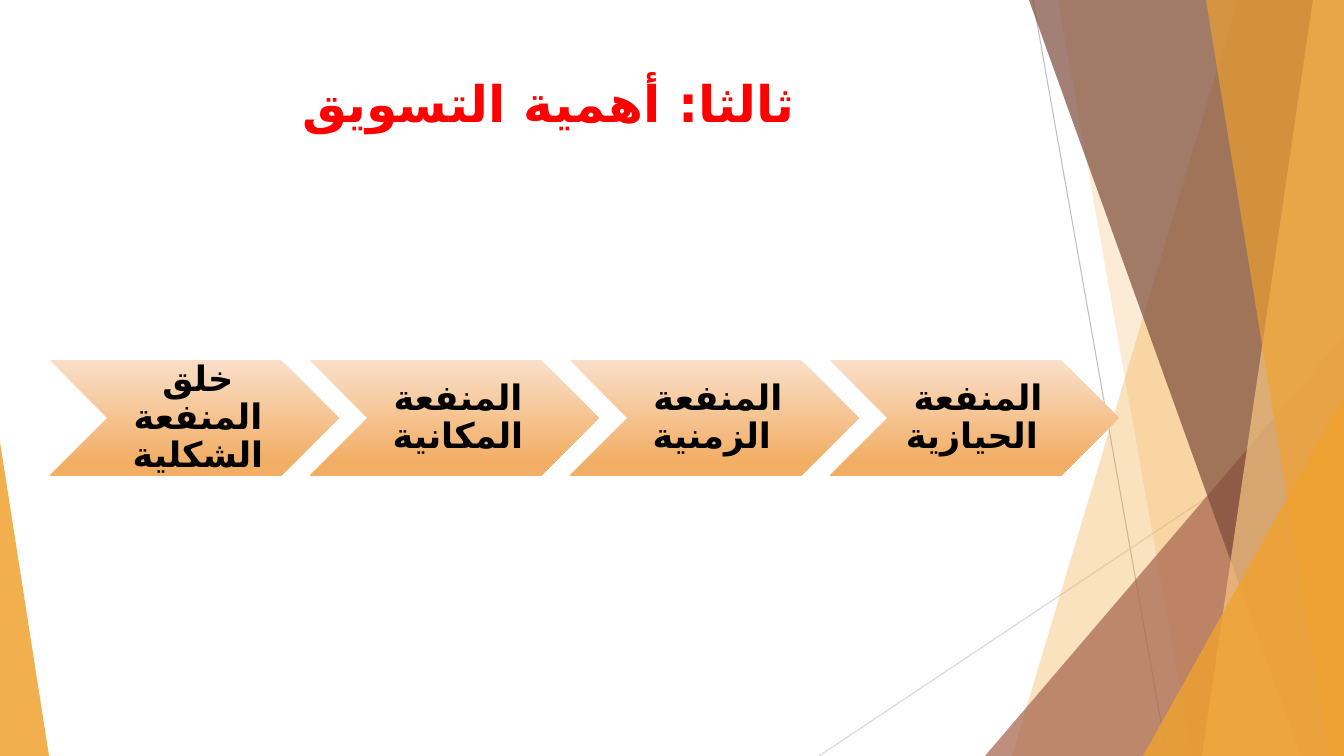
from lxml import etree
from pptx import Presentation, util as u
from pptx.dml.color import RGBColor
from pptx.enum import shapes, text
from pptx.oxml.ns import qn

PX = 914400 / 100.8
WIDTH, HEIGHT = 1344, 756
COLOURS = {
    "amber": "F0A22E", "pale amber": "F6C782", "rust": "A5644E", "brown": "7C4B3B",
    "grey": "BFBFBF", "light grey": "D9D9D9", "title": "FF0000", "text": "000000",
    "chevron top": "F9DFC9", "chevron bottom": "F2AE65",
}


def px(*lengths):
    return [u.Emu(round(length * PX)) for length in lengths]


def format_paragraph(paragraph, size, colour):
    paragraph.alignment = text.PP_ALIGN.CENTER
    for run in paragraph.runs:
        run.font.size = u.Pt(size)
        run.font.bold = True
        run.font.name = "Lato"
        run.font.color.rgb = RGBColor.from_string(COLOURS[colour])
        # Lato has no Arabic letters, so they take a complex-script font
        etree.SubElement(run.font._element, qn("a:cs"), typeface="DejaVu Sans")


presentation = Presentation()
presentation.slide_width, presentation.slide_height = px(WIDTH, HEIGHT)
slide = presentation.slides.add_slide(presentation.slide_layouts[5])

# Thin lines behind the coloured facets
for colour, ends in [("grey", (1033, 0, 1167, HEIGHT)),
                     ("light grey", (WIDTH, 406, 819, HEIGHT))]:
    line = slide.shapes.add_connector(shapes.MSO_CONNECTOR.STRAIGHT, *px(*ends))
    line.line.color.rgb = RGBColor.from_string(COLOURS[colour])
    line.line.width = u.Pt(0.75)
    etree.SubElement(line._element.spPr, qn("a:effectLst"))

# Facets: colour, opacity in percent, kind, and either
# the top-left, top-right, bottom-right and bottom-left x of a band,
# or the left, top, width, height and apex of a triangle
facets = [
    ("amber", 30, "band", (1238, WIDTH, WIDTH, 1012)),
    ("amber", 20, "band", (1058, WIDTH, WIDTH, 1192)),
    ("rust", 72, "triangle", (985, 336, 359, 420, 1)),
    ("brown", 70, "band", (1029, WIDTH, WIDTH, 1301)),
    ("pale amber", 70, "band", (1313, WIDTH, WIDTH, 1202)),
    ("amber", 65, "band", (1206, WIDTH, WIDTH, 1329)),
    ("amber", 80, "triangle", (1143, 396, 201, 360, 1)),
    ("amber", 85, "triangle", (0, 442, 49, 314, 0)),
]
for colour, opacity, kind, geometry in facets:
    if kind == "band":
        corners = list(zip(geometry, (0, 0, HEIGHT, HEIGHT)))
        builder = slide.shapes.build_freeform(*corners[0], scale=PX)
        builder.add_line_segments(corners[1:], close=True)
        facet = builder.convert_to_shape()
    else:
        *box, apex = geometry
        facet = slide.shapes.add_shape(shapes.MSO_SHAPE.ISOSCELES_TRIANGLE, *px(*box))
        facet.adjustments[0] = apex
    facet.shadow.inherit = False
    facet.line.fill.background()
    facet.fill.solid()
    facet.fill.fore_color.rgb = RGBColor.from_string(COLOURS[colour])
    fill_colour = facet._element.spPr.find(".//" + qn("a:srgbClr"))
    etree.SubElement(fill_colour, qn("a:alpha"), val=str(opacity * 1000))

title = slide.shapes.title
title.left, title.top, title.width, title.height = px(75, 67, 947, 95)
title.text_frame.text = "ثالثا: أهمية التسويق"
title.text_frame.vertical_anchor = text.MSO_ANCHOR.TOP
title.text_frame.auto_size = text.MSO_AUTO_SIZE.NONE
heading = title.text_frame.paragraphs[0]
format_paragraph(heading, 36, "title")
heading._p.get_or_add_pPr().set("rtl", "1")

# Row of chevrons, one for each utility
utilities = ["خلق المنفعة الشكلية", "المنفعة المكانية", "المنفعة الزمنية ", "المنفعة الحيازية "]
for index, utility in enumerate(utilities):
    chevron = slide.shapes.add_shape(shapes.MSO_SHAPE.CHEVRON, *px(50 + 260 * index, 360, 289, 116))
    chevron.shadow.inherit = False
    chevron.line.fill.background()
    chevron.fill.gradient()
    chevron.fill.gradient_angle = 270
    stops = [(0, "chevron top"), (0.88, "chevron bottom")]
    for stop, (position, colour) in zip(chevron.fill.gradient_stops, stops):
        stop.position = position
        stop.color.rgb = RGBColor.from_string(COLOURS[colour])

    frame = chevron.text_frame
    frame.text = utility
    frame.word_wrap = True
    frame.vertical_anchor = text.MSO_ANCHOR.MIDDLE
    frame.margin_left, frame.margin_top, frame.margin_right, frame.margin_bottom = px(11, 4, 4, 4)
    frame.paragraphs[0].line_spacing = 0.9
    format_paragraph(frame.paragraphs[0], 25, "text")

presentation.save("out.pptx")
